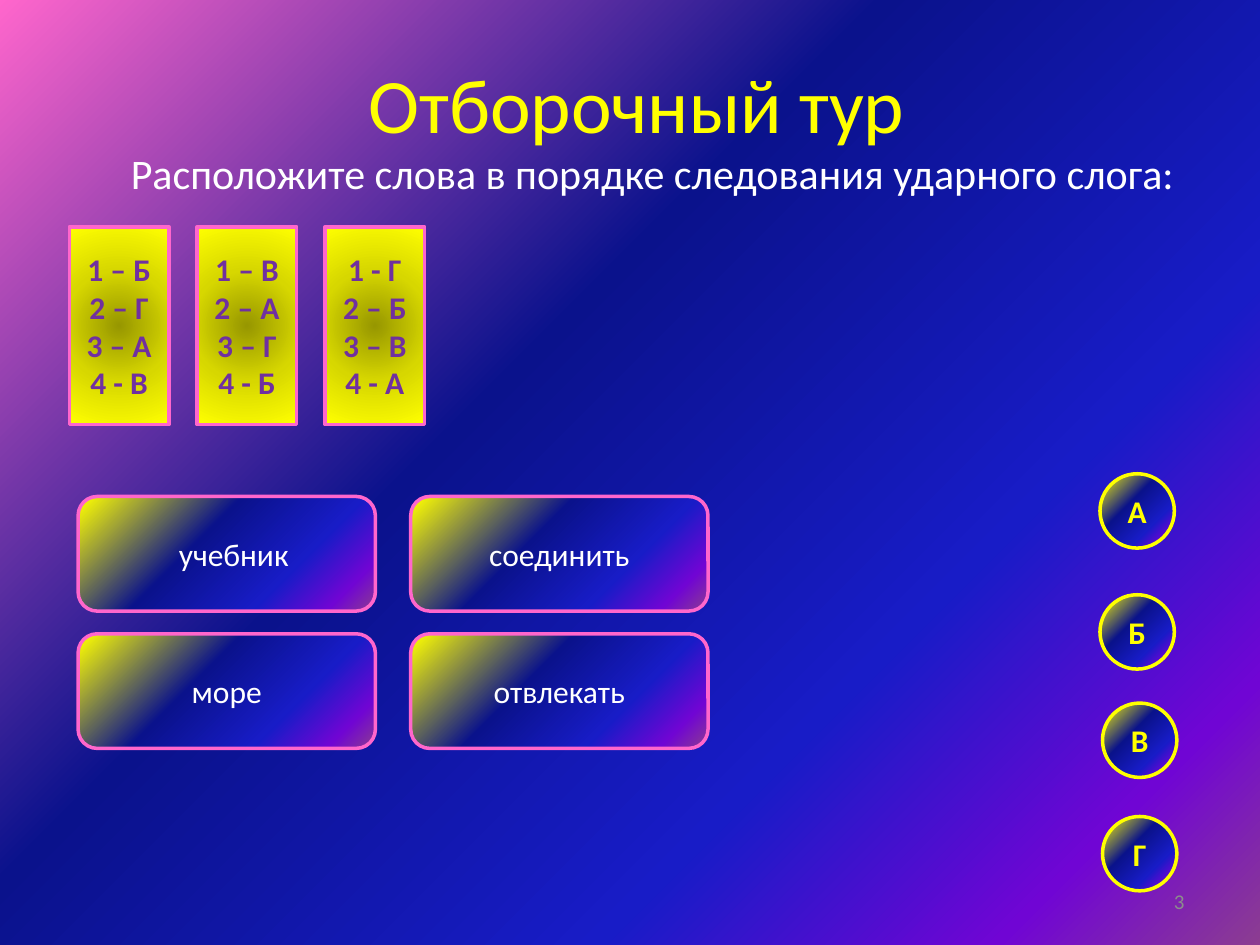
"""Build a quiz slide: order the words by their stressed syllable."""
from lxml import etree
from pptx import Presentation
from pptx.dml.color import RGBColor
from pptx.enum import shapes, text
from pptx.oxml import ns
from pptx.util import Inches, Pt

FONT = "Calibri"
YELLOW = RGBColor(0xFF, 0xFF, 0x00)
PINK = RGBColor(0xFF, 0x66, 0xCC)
WHITE = RGBColor(0xFF, 0xFF, 0xFF)
PURPLE = RGBColor(0x70, 0x30, 0xA0)
GREY = RGBColor(0x8C, 0x8C, 0x8C)
NIGHT = [
    (40, RGBColor(0x0A, 0x12, 0x8C)),
    (70, RGBColor(0x18, 0x1C, 0xC7)),
    (88, RGBColor(0x70, 0x05, 0xD4)),
    (100, RGBColor(0x8C, 0x3D, 0x91)),
]
BACKDROP = [(0, PINK)] + NIGHT
GLOW = [(1, YELLOW)] + NIGHT
GOLD = [(0, RGBColor(0x97, 0x97, 0x00)), (50, RGBColor(0xD7, 0xD7, 0x00)), (100, YELLOW)]

WORDS = [["учебник", "соединить"], ["море", "отвлекать"]]
LETTERS = [("А", 8.73, 3.76), ("Б", 8.73, 4.72), ("В", 8.75, 5.58), ("Г", 8.75, 6.48)]
ANSWERS = [
    ["1 – Б", "2 – Г", "3 – А", "4 - В"],
    ["1 – В", "2 – А", "3 – Г", "4 - Б"],
    ["1 - Г", "2 – Б", "3 – В", "4 - А"],
]


def paint_gradient(fill, owner, stops, radial=False):
    """Fill the owner element with a diagonal or a centred radial gradient."""
    fill.gradient()
    gradient = next(owner.iter(ns.qn("a:gradFill")))
    for child in list(gradient):
        gradient.remove(child)
    stop_list = etree.SubElement(gradient, ns.qn("a:gsLst"))
    for percent, color in stops:
        stop = etree.SubElement(stop_list, ns.qn("a:gs"), pos=str(percent * 1000))
        etree.SubElement(stop, ns.qn("a:srgbClr"), val=str(color))
    if radial:
        circle = etree.SubElement(gradient, ns.qn("a:path"), {"path": "circle"})
        etree.SubElement(circle, ns.qn("a:fillToRect"), dict.fromkeys("ltrb", "50000"))
    else:
        etree.SubElement(gradient, ns.qn("a:lin"), ang=str(45 * 60000), scaled="0")


def write_lines(frame, lines, size, color, bold=False, align=text.PP_ALIGN.CENTER):
    """Write one formatted paragraph per line."""
    for index, line in enumerate(lines):
        paragraph = frame.add_paragraph() if index else frame.paragraphs[0]
        paragraph.alignment = align
        run = paragraph.add_run()
        run.text = line
        run.font.name = FONT
        run.font.size = Pt(size)
        run.font.bold = bold
        run.font.color.rgb = color


def add_panel(slide, kind, box, stops, border, lines, color, bold=False, radial=False):
    """Add a gradient shape with a border and centred text."""
    panel = slide.shapes.add_shape(kind, *map(Inches, box))
    panel.shadow.inherit = False
    paint_gradient(panel.fill, panel._element.spPr, stops, radial)
    panel.line.color.rgb = border
    panel.line.width = Pt(2)
    panel.text_frame.vertical_anchor = text.MSO_ANCHOR.MIDDLE
    write_lines(panel.text_frame, lines, 18, color, bold)
    return panel


def add_title(slide, wording):
    """Place and fill the title placeholder."""
    title = slide.shapes.title
    title.left, title.top, title.width, title.height = map(Inches, (0.5, 0.3, 9.11, 1.03))
    title.text_frame.vertical_anchor = text.MSO_ANCHOR.MIDDLE
    write_lines(title.text_frame, [wording], 44, YELLOW)


def add_label(slide, box, wording, size, color, align, anchor, wrap):
    """Add a single-line text box."""
    frame = slide.shapes.add_textbox(*map(Inches, box)).text_frame
    frame.word_wrap = wrap
    frame.vertical_anchor = anchor
    write_lines(frame, [wording], size, color, align=align)


def add_word_cards(slide):
    """Lay out the words in a two by two grid."""
    for row, words in enumerate(WORDS):
        for column, word in enumerate(words):
            box = (0.62 + 2.64 * column, 3.94 + 1.09 * row, 2.36, 0.91)
            card = add_panel(slide, shapes.MSO_SHAPE.ROUNDED_RECTANGLE, box,
                             GLOW, PINK, [word], WHITE)
            if word == "учебник":
                card.text_frame.margin_left = Inches(0.21)


def add_letters(slide):
    """Add the round answer letters down the right side."""
    for letter, left, top in LETTERS:
        add_panel(slide, shapes.MSO_SHAPE.OVAL, (left, top, 0.59, 0.59),
                  GLOW, YELLOW, [letter], YELLOW, bold=True)


def add_answers(slide):
    """Add the answer keys in a row."""
    for column, answer in enumerate(ANSWERS):
        add_panel(slide, shapes.MSO_SHAPE.RECTANGLE, (0.55 + 1.015 * column, 1.8, 0.79, 1.57),
                  GOLD, PINK, answer, PURPLE, bold=True, radial=True)


def main():
    """Build and save the slide."""
    deck = Presentation()
    deck.slide_width, deck.slide_height = Inches(10), Inches(7.5)
    slide = deck.slides.add_slide(deck.slide_layouts[5])
    paint_gradient(slide.background.fill, slide._element, BACKDROP)
    add_title(slide, "Отборочный тур")
    add_label(slide, (0.94, 1.12, 8.56, 0.5),
              "Расположите слова в порядке следования ударного слога:",
              24, WHITE, text.PP_ALIGN.LEFT, text.MSO_ANCHOR.TOP, False)
    add_word_cards(slide)
    add_letters(slide)
    add_answers(slide)
    add_label(slide, (7.17, 6.95, 2.33, 0.4), "3",
              12, GREY, text.PP_ALIGN.RIGHT, text.MSO_ANCHOR.MIDDLE, True)
    deck.save("out.pptx")


if __name__ == "__main__":
    main()
